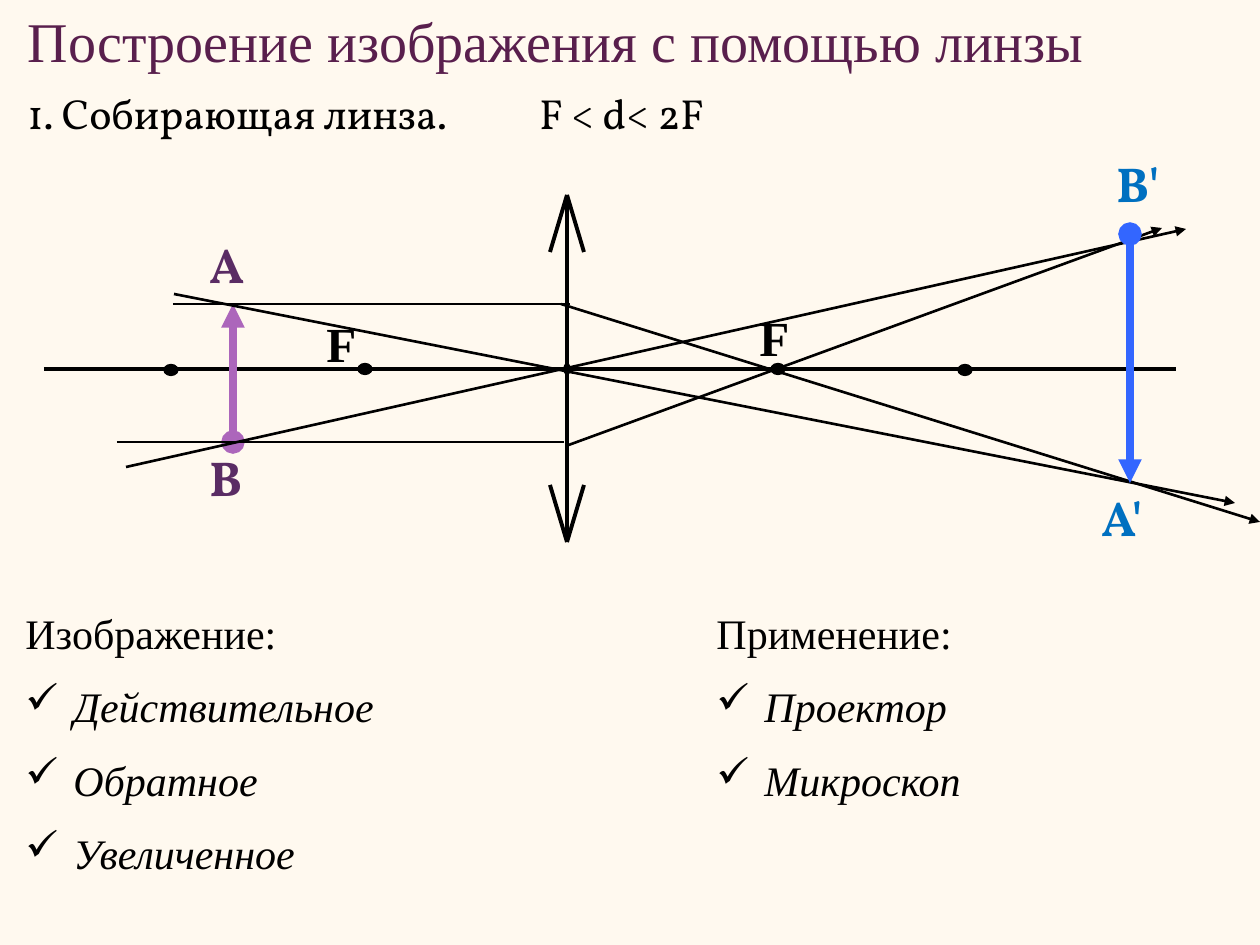
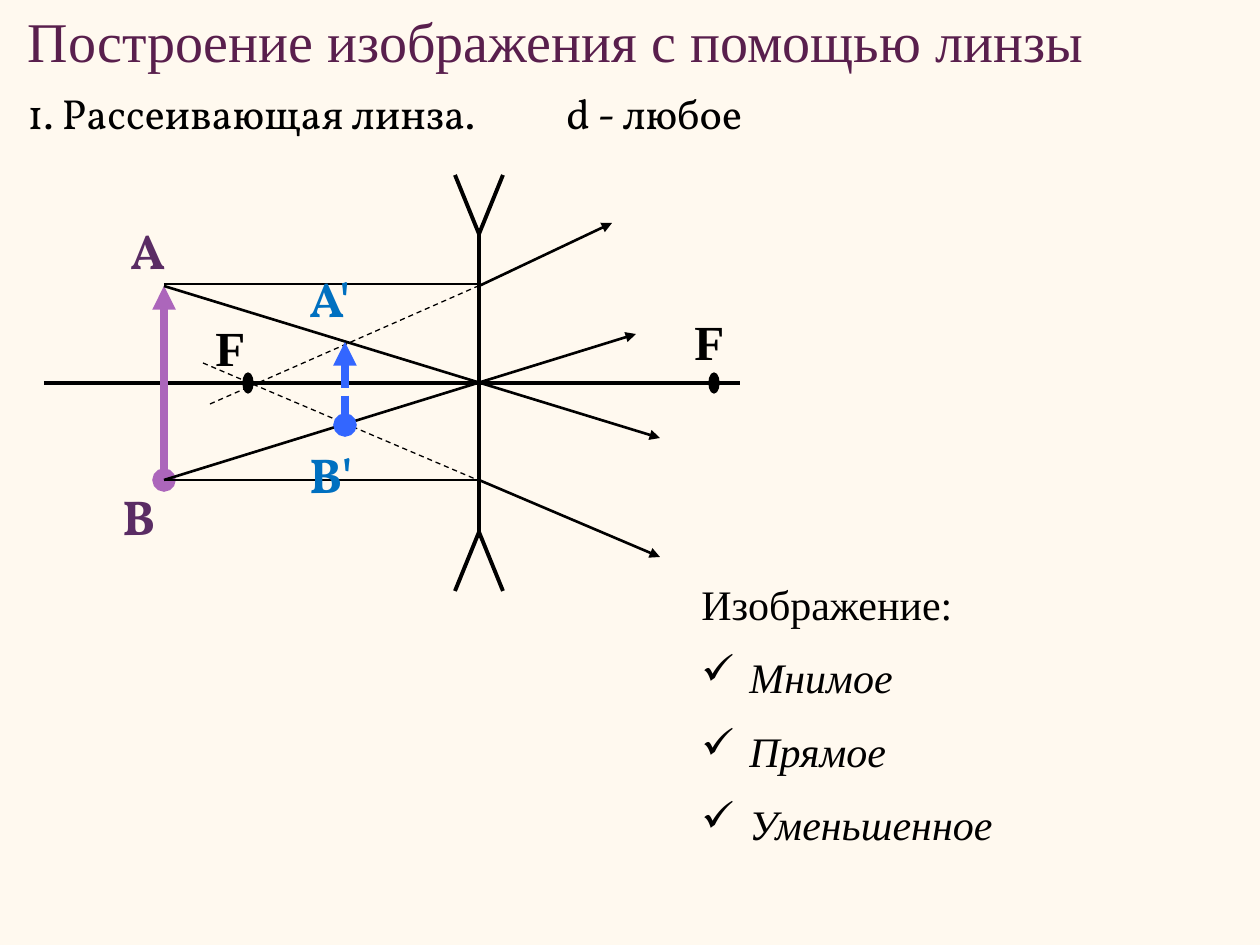
import pptx
import pptx.util
import pptx.dml.color
import pptx.enum.dml
import pptx.enum.shapes
import pptx.enum.text
import pptx.oxml.ns
import lxml.etree
import dataclasses

PX = 914400 / 126  # one px in EMU


@dataclasses.dataclass(frozen=True)
class Theme:
    background: str = "FFF9EF"
    ink: str = "000000"
    title: str = "591F4D"
    source: str = "AC66BB"
    source_label: str = "5A2C64"
    image: str = "3366FF"
    image_label: str = "0070C0"
    serif: str = "Times New Roman"
    display: str = "Vollkorn"
    title_size: int = 32
    body_size: int = 24
    label_size: int = 28
    item_space: float = 13.2
    heavy: float = 4.5
    axis: float = 2.25
    ray: float = 1.5
    thin: float = 0.75


THEME = Theme()
TITLE = "Построение изображения с помощью линзы"
TITLE_BOX = (15, 0, 1230, 81)

# Lines are x1, y1, x2, y2; arrows run from tip to base; dots are centres
SLIDES = [
    {
        "subtitle": ("1. Собирающая линза.", "F < d< 2F"),
        "subtitle_box": (15, 81, 896, 63),
        "tab": 512,
        "lens": {"x": 567, "top": 195, "bottom": 542, "ends": (195, 542),
                 "spread": 17, "barb": 57},
        "axis": (44, 369, 1176, 369),
        "dots": [(567, 369, 6, 11), (365, 369, 14, 11), (778, 369, 14, 11),
                 (171, 370, 14, 11), (965, 370, 14, 11)],
        "source": (233, 304, 233, 442),
        "image": (1130, 483, 1130, 234),
        "image_dash": None,
        "plain_rays": [(173, 304, 570, 304), (117, 442, 564, 442)],
        "dashed_rays": [],
        "arrow_rays": [(174, 294, 1235, 503), (126, 467, 1186, 229),
                       (566, 446, 1162, 228), (561, 304, 1260, 522)],
        "labels": [("F", 314, 307), ("F", 747, 301), ("A", 197, 228),
                   ("B", 197, 441), ("A'", 1089, 481), ("B'", 1104, 147)],
        "lists": [
            ((13, 601, 496, 344), "Изображение:",
             ["Действительное", "Обратное", "Увеличенное"]),
            ((704, 601, 496, 344), "Применение:", ["Проектор", "Микроскоп"]),
        ],
    },
    {
        "subtitle": ("1. Рассеивающая линза.", "d - любое"),
        "subtitle_box": (15, 81, 1181, 63),
        "tab": 539,
        "lens": {"x": 479, "top": 234, "bottom": 538, "ends": (234, 532),
                 "spread": 24, "barb": -59},
        "axis": (44, 383, 740, 383),
        "dots": [(714, 383, 10, 20), (248, 383, 10, 20)],
        "source": (164, 286, 164, 480),
        "image": (345, 342, 345, 425),
        "image_dash": pptx.enum.dml.MSO_LINE.SQUARE_DOT,
        "plain_rays": [(164, 284, 479, 284), (164, 480, 479, 480)],
        "dashed_rays": [(210, 404, 510, 272), (203, 363, 480, 481)],
        "arrow_rays": [(479, 286, 612, 223), (479, 480, 660, 557),
                       (164, 286, 660, 438), (164, 480, 636, 334)],
        "labels": [("F", 203, 311), ("F", 682, 305), ("A", 118, 214),
                   ("B", 110, 480), ("A'", 297, 262), ("B'", 297, 438)],
        "lists": [((689, 572, 427, 292), "Изображение:",
                   ["Мнимое", "Прямое", "Уменьшенное"])],
    },
]

LABEL_STYLES = {
    "F": (THEME.serif, THEME.ink),
    "A": (THEME.display, THEME.source_label),
    "B": (THEME.display, THEME.source_label),
    "A'": (THEME.display, THEME.image_label),
    "B'": (THEME.display, THEME.image_label),
}


def emu(*lengths):
    return [pptx.util.Emu(round(length * PX)) for length in lengths]


def rgb(color):
    return pptx.dml.color.RGBColor.from_string(color)


def add_child(parent, tag, **attributes):
    return lxml.etree.SubElement(parent, pptx.oxml.ns.qn(tag), attributes)


# Text
def set_font(paragraph, name, size, color, bold=False, italic=False):
    font = paragraph.font
    font.name, font.size = name, pptx.util.Pt(size)
    font.bold, font.italic = bold, italic
    font.color.rgb = rgb(color)


def prepare_frame(shape):
    frame = shape.text_frame
    frame.word_wrap = True
    frame.auto_size = pptx.enum.text.MSO_AUTO_SIZE.NONE
    frame.vertical_anchor = pptx.enum.text.MSO_ANCHOR.TOP
    return frame


def add_text(slide, box, text):
    frame = prepare_frame(slide.shapes.add_textbox(*emu(*box)))
    frame.text = text
    return frame


def add_title(slide):
    shape = slide.shapes.title
    shape.left, shape.top, shape.width, shape.height = emu(*TITLE_BOX)
    paragraph = prepare_frame(shape).paragraphs[0]
    paragraph.text = TITLE
    paragraph.alignment = pptx.enum.text.PP_ALIGN.LEFT
    set_font(paragraph, THEME.serif, THEME.title_size, THEME.title)


def add_subtitle(slide, box, parts, tab):
    paragraph = add_text(slide, box, "\t".join(parts)).paragraphs[0]
    tabs = add_child(paragraph._p.get_or_add_pPr(), "a:tabLst")
    add_child(tabs, "a:tab", pos=str(emu(tab)[0]), algn="l")
    set_font(paragraph, THEME.display, THEME.body_size, THEME.ink)


def add_list(slide, box, heading, items):
    frame = add_text(slide, box, heading)
    set_font(frame.paragraphs[0], THEME.serif, THEME.body_size, THEME.ink)
    indent = emu(48)[0]
    for item in items:
        paragraph = frame.add_paragraph()
        paragraph.text = item
        paragraph.space_before = pptx.util.Pt(THEME.item_space)
        properties = paragraph._p.get_or_add_pPr()
        properties.set("marL", str(indent))
        properties.set("indent", str(-indent))
        add_child(properties, "a:buChar", char="✓")
        set_font(paragraph, THEME.serif, THEME.body_size, THEME.ink, italic=True)


def add_label(slide, text, left, top):
    width = 72 if text != "A'" else 96
    paragraph = add_text(slide, (left, top, width, 72), text).paragraphs[0]
    name, color = LABEL_STYLES[text]
    set_font(paragraph, name, THEME.label_size, color, bold=True)


# Drawing
def add_line(slide, points, width, color=THEME.ink, dash=None, head=None, tail=None):
    connector = slide.shapes.add_connector(
        pptx.enum.shapes.MSO_CONNECTOR.STRAIGHT, *emu(*points))
    line = connector.line
    line.color.rgb = rgb(color)
    line.width = pptx.util.Pt(width)
    if dash:
        line.dash_style = dash
    for tag, kind in (("a:headEnd", head), ("a:tailEnd", tail)):
        if kind:
            add_child(line._get_or_add_ln(), tag, type=kind)
    add_child(connector._element.spPr, "a:effectLst")


def add_dot(slide, x, y, width, height):
    dot = slide.shapes.add_shape(
        pptx.enum.shapes.MSO_SHAPE.OVAL,
        *emu(x - width / 2, y - height / 2, width, height))
    dot.shadow.inherit = False
    dot.fill.solid()
    dot.fill.fore_color.rgb = rgb(THEME.ink)
    dot.line.color.rgb = rgb(THEME.ink)
    dot.line.width = pptx.util.Pt(THEME.thin)


def add_lens(slide, x, top, bottom, ends, spread, barb):
    add_line(slide, (x, top, x, bottom), THEME.axis)
    for end, reach in zip(ends, (barb, -barb)):
        for side in (-spread, spread):
            add_line(slide, (x, end, x + side, end + reach), THEME.axis)


def add_diagram(slide, content):
    add_lens(slide, **content["lens"])
    add_line(slide, content["axis"], THEME.axis)
    for dot in content["dots"]:
        add_dot(slide, *dot)
    add_line(slide, content["source"], THEME.heavy, THEME.source,
             head="triangle", tail="oval")
    for ray in content["plain_rays"]:
        add_line(slide, ray, THEME.ray)
    for ray in content["dashed_rays"]:
        add_line(slide, ray, THEME.thin, dash=pptx.enum.dml.MSO_LINE.DASH)
    for ray in content["arrow_rays"]:
        add_line(slide, ray, THEME.ray, tail="triangle")
    add_line(slide, content["image"], THEME.heavy, THEME.image,
             content["image_dash"], head="triangle", tail="oval")
    for label in content["labels"]:
        add_label(slide, *label)


def main():
    presentation = pptx.Presentation()
    presentation.slide_width, presentation.slide_height = emu(1260, 945)
    background = presentation.slide_master.background.fill
    background.solid()
    background.fore_color.rgb = rgb(THEME.background)
    title_only = presentation.slide_layouts[5]
    for content in SLIDES:
        slide = presentation.slides.add_slide(title_only)
        add_title(slide)
        add_subtitle(slide, content["subtitle_box"], content["subtitle"], content["tab"])
        add_diagram(slide, content)
        for box, heading, items in content["lists"]:
            add_list(slide, box, heading, items)
    presentation.save("out.pptx")


if __name__ == "__main__":
    main()
